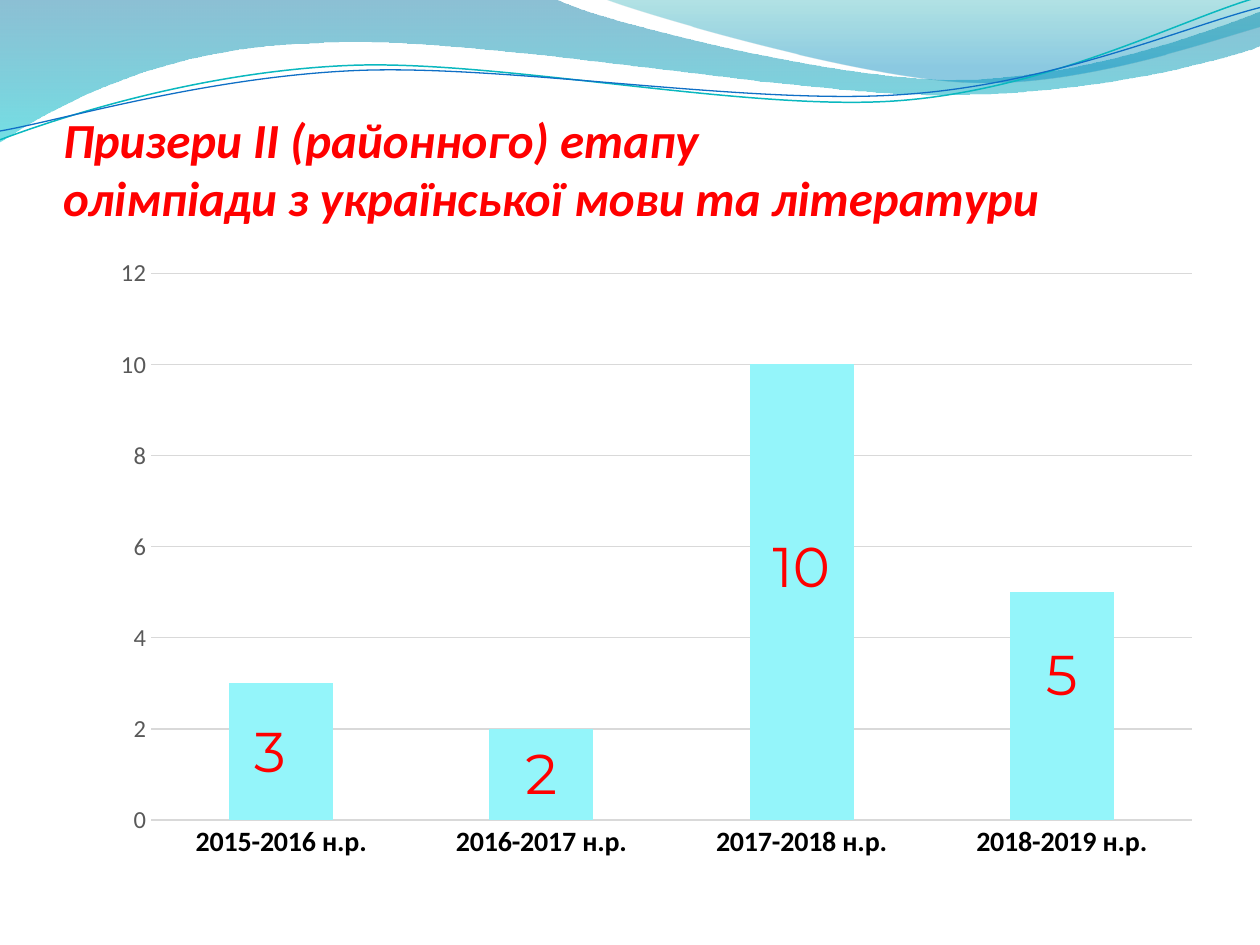
from pptx import Presentation
from pptx.chart.data import CategoryChartData
from pptx.dml.color import RGBColor
from pptx.enum.chart import XL_CHART_TYPE, XL_LABEL_POSITION, XL_TICK_MARK
from pptx.enum.text import MSO_ANCHOR, PP_ALIGN
from pptx.oxml import parse_xml
from pptx.oxml.ns import nsdecls
from pptx.util import Inches, Pt

RED = RGBColor(0xFF, 0x00, 0x00)
BLACK = RGBColor(0x00, 0x00, 0x00)
GREY = RGBColor(0x59, 0x59, 0x59)
GRID = RGBColor(0xD9, 0xD9, 0xD9)
AQUA = RGBColor(0x94, 0xF5, 0xFA)
TEAL = RGBColor(0x0A, 0xB8, 0xBF)
BLUE = RGBColor(0x0F, 0x6F, 0xC6)
DEEP_BLUE = RGBColor(0x00, 0x74, 0xA1)
CYAN = RGBColor(0x00, 0xC6, 0xCF)
SEA_GREEN = RGBColor(0x00, 0xA1, 0xA9)
SKY_BLUE = RGBColor(0x00, 0x8B, 0xBF)
FONT = "Calibri"

# Each wave is a start point, then segments: 2 numbers for a line, 6 for a Bezier curve.
LEFT_WAVE = [(0, 0), (4.4, -0.01), (4.76, 0.17, 6.64, 0.63, 7.58, 0.63),
             (8.53, 0.63, 9.58, 0.26, 10, 0.09), (10.01, 0.36),
             (9.83, 0.44, 8.7, 0.76, 7.46, 0.75), (6.22, 0.75, 3.82, 0.28, 2.57, 0.34),
             (1.29, 0.36, 0.46, 0.83, -0.01, 1.13)]
RIGHT_WAVE = [(4.79, -0.01), (5.09, 0.11, 6.82, 0.62, 7.69, 0.65),
              (8.56, 0.69, 9.61, 0.32, 10, 0.21), (10, 0)]
TEAL_LINE = [(0, 1.11), (0.48, 0.93, 1.58, 0.57, 2.77, 0.52),
             (3.95, 0.47, 5.93, 0.89, 7.13, 0.8), (8.33, 0.71, 9.38, 0.15, 9.98, -0.02)]
BLUE_LINE = [(0, 1.04), (0.47, 0.96, 1.64, 0.61, 2.83, 0.56),
             (4.03, 0.51, 5.97, 0.84, 7.17, 0.75), (8.36, 0.67, 9.41, 0.21, 10, 0.06)]

PRIZES = {"2015-2016 н.р.": 3, "2016-2017 н.р.": 2, "2017-2018 н.р.": 10, "2018-2019 н.р.": 5}
LABEL_SHIFTS = [(-0.01, 0), (0, 0), (0, -0.04), (0, -0.05)]


def add_outline(s, path, close):
    """Build a freeform through the end points, then bend its curved segments."""
    points = [(Inches(seg[-2]), Inches(seg[-1])) for seg in path]
    builder = s.shapes.build_freeform(*points[0])
    builder.add_line_segments(points[1:], close=close)
    sp = builder.convert_to_shape()
    sp.shadow.inherit = False
    for line, seg in zip(sp._element.xpath(".//a:lnTo"), path[1:]):
        if len(seg) == 6:
            pts = "".join(f'<a:pt x="{Inches(x) - sp.left}" y="{Inches(y) - sp.top}"/>'
                          for x, y in zip(seg[::2], seg[1::2]))
            curve = parse_xml(f'<a:cubicBezTo {nsdecls("a")}>{pts}</a:cubicBezTo>')
            line.getparent().replace(line, curve)
    return sp


def add_wave(s, path, stops):
    """Stops are (position, colour, opacity), in percent, from top to bottom."""
    sp = add_outline(s, path, True)
    sp.line.fill.background()
    gs = "".join(f'<a:gs pos="{pos * 1000}"><a:srgbClr val="{color}">'
                 f'<a:alpha val="{alpha * 1000}"/></a:srgbClr></a:gs>'
                 for pos, color, alpha in stops)
    grad = parse_xml(f'<a:gradFill {nsdecls("a")} rotWithShape="1"><a:gsLst>{gs}</a:gsLst>'
                     '<a:lin ang="5400000" scaled="0"/></a:gradFill>')
    sp._element.spPr.find("{*}custGeom").addnext(grad)


def add_wave_line(s, path, color, width):
    sp = add_outline(s, path, False)
    sp.fill.background()
    sp.line.color.rgb = color
    sp.line.width = Pt(width)


def add_waves(s):
    add_wave(s, LEFT_WAVE, [(0, DEEP_BLUE, 45), (100, CYAN, 55)])
    add_wave(s, RIGHT_WAVE, [(0, SEA_GREEN, 30), (80, SKY_BLUE, 45)])
    add_wave_line(s, TEAL_LINE, TEAL, 0.85)
    add_wave_line(s, BLUE_LINE, BLUE, 0.75)


def style_font(font, size, color, name=FONT, bold=False):
    font.size, font.name, font.bold = Pt(size), name, bold
    font.color.rgb = color


def set_title(s, left, top, width, height):
    title = s.shapes.title
    title.left, title.top, title.width, title.height = left, top, width, height
    tf = title.text_frame
    tf.word_wrap = True
    tf.vertical_anchor = MSO_ANCHOR.BOTTOM
    tf.margin_left = tf.margin_right = tf.margin_bottom = 0
    tf.margin_top = Inches(0.05)
    p = tf.paragraphs[0]
    p.text = "Призери ІІ (районного) етапу \vолімпіади з української мови та літератури"
    p.alignment = PP_ALIGN.LEFT
    for r in p.runs:
        style_font(r.font, 28, RED, bold=True)
        r.font.italic = True
    s.shapes._spTree.append(title._element)  # in front of the waves


def manual_layout(modes, **values):
    parts = "".join(f'<c:{key} val="{val}"/>' for key, val in values.items())
    return parse_xml(f'<c:layout {nsdecls("c")}><c:manualLayout>{modes}{parts}'
                     '</c:manualLayout></c:layout>')


def place_plot(chart, width, height):
    """Set the plot's inner box inside a chart of the given size."""
    plot_area = chart._chartSpace.chart.plotArea
    for layout in plot_area.findall("{*}layout"):
        plot_area.remove(layout)
    plot_area.insert(0, manual_layout(
        '<c:layoutTarget val="inner"/><c:xMode val="edge"/><c:yMode val="edge"/>',
        x=Inches(0.42) / width, y=Inches(0.22) / height,
        w=Inches(8.26) / width, h=Inches(4.34) / height))


def add_prize_chart(s, left, top, width, height):
    data = CategoryChartData()
    data.categories = list(PRIZES)
    data.add_series("Series 1", list(PRIZES.values()))
    chart = s.shapes.add_chart(XL_CHART_TYPE.COLUMN_CLUSTERED, left, top, width, height, data).chart
    chart.has_legend = chart.has_title = False
    style_font(chart.font, 10, BLACK)
    place_plot(chart, width, height)

    for axis, size, color, bold in ((chart.category_axis, 16, BLACK, True),
                                    (chart.value_axis, 14, GREY, False)):
        style_font(axis.tick_labels.font, size, color, bold=bold)
        axis.major_tick_mark = axis.minor_tick_mark = XL_TICK_MARK.NONE
        axis.format.line.fill.background()
    axis = chart.value_axis
    axis.minimum_scale, axis.maximum_scale, axis.major_unit = 0, 12, 2
    axis.major_gridlines.format.line.color.rgb = GRID
    axis.major_gridlines.format.line.width = Pt(0.75)

    plot = chart.plots[0]
    plot.gap_width = 150
    plot.vary_by_categories = False
    series = plot.series[0]
    series.format.fill.solid()
    series.format.fill.fore_color.rgb = AQUA
    labels = series.data_labels
    labels.show_value = True
    style_font(labels.font, 32, RED, "Montserrat")
    for i in range(len(PRIZES)):
        label = series.points[i].data_label
        style_font(label.font, 32, RED, "Montserrat")
        label.position = XL_LABEL_POSITION.CENTER
    for idx, (x, y) in zip(series._element.xpath("c:dLbls/c:dLbl/c:idx"), LABEL_SHIFTS):
        idx.addnext(manual_layout("", x=x, y=y))


def main():
    prs = Presentation()
    prs.slide_width, prs.slide_height = Inches(10), Inches(7.5)
    s = prs.slides.add_slide(prs.slide_layouts[5])
    add_waves(s)
    set_title(s, Inches(0.5), Inches(0.39), Inches(9), Inches(1.41))
    add_prize_chart(s, Inches(0.78), Inches(1.95), Inches(8.86), Inches(4.96))
    prs.save("out.pptx")


if __name__ == "__main__":
    main()
